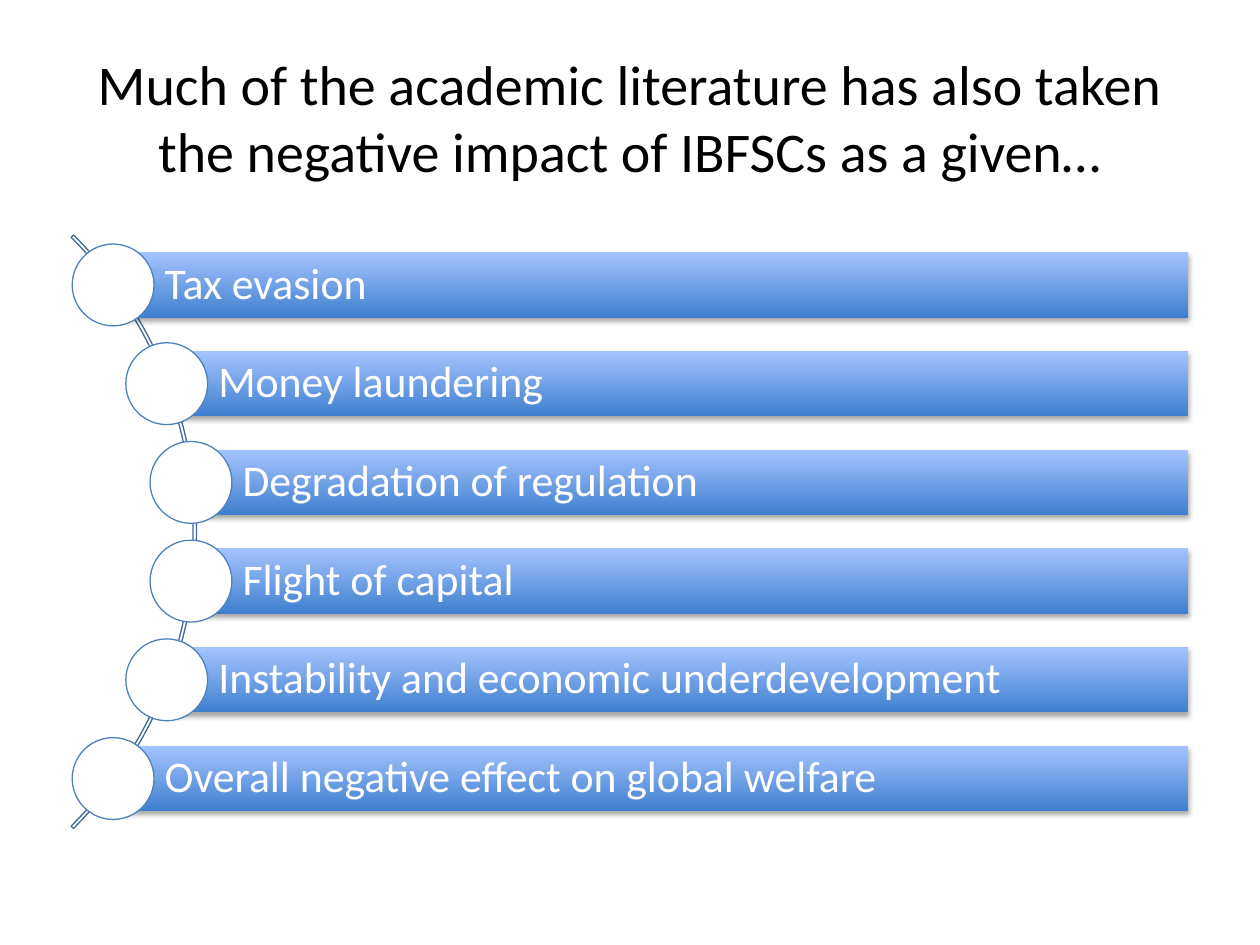
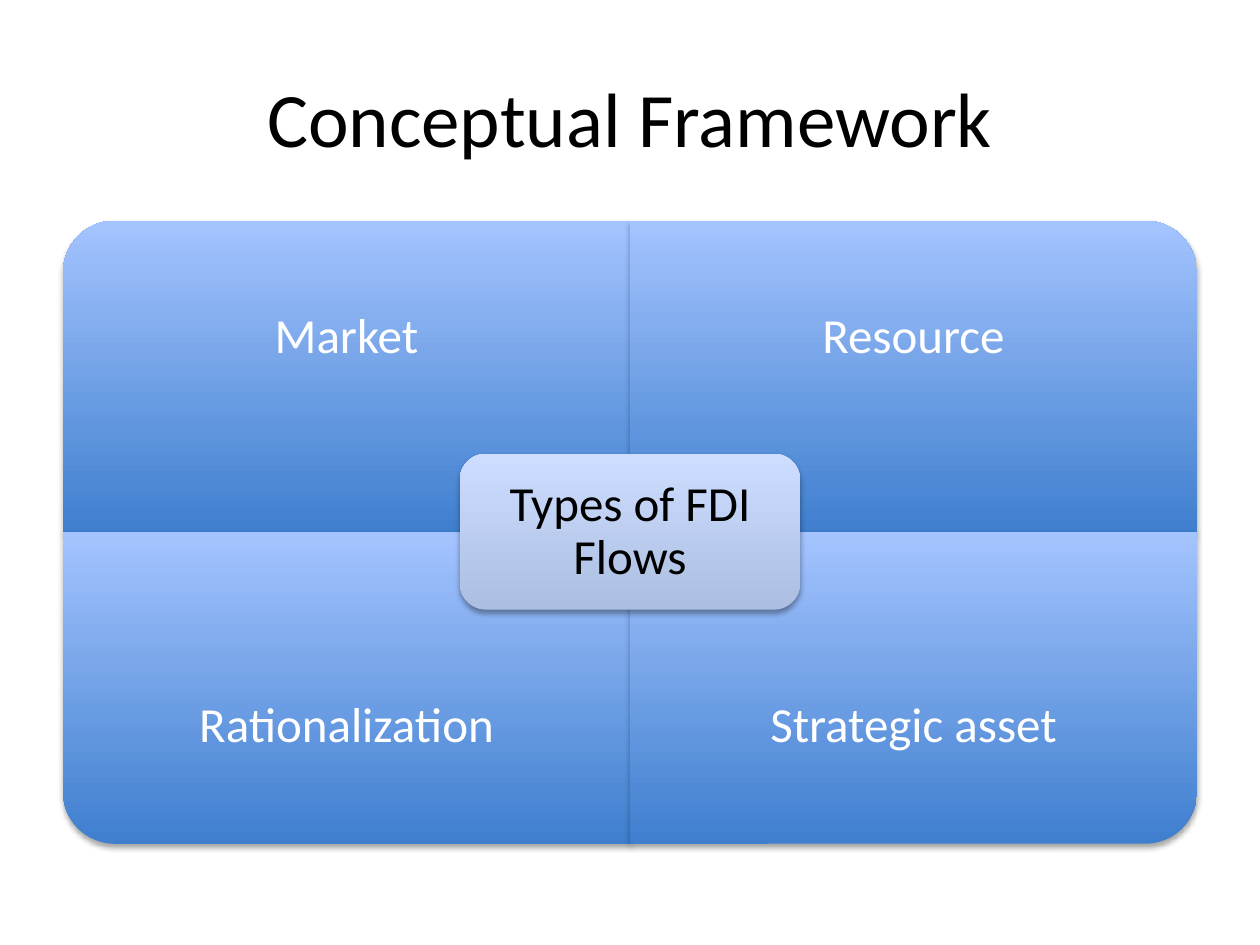
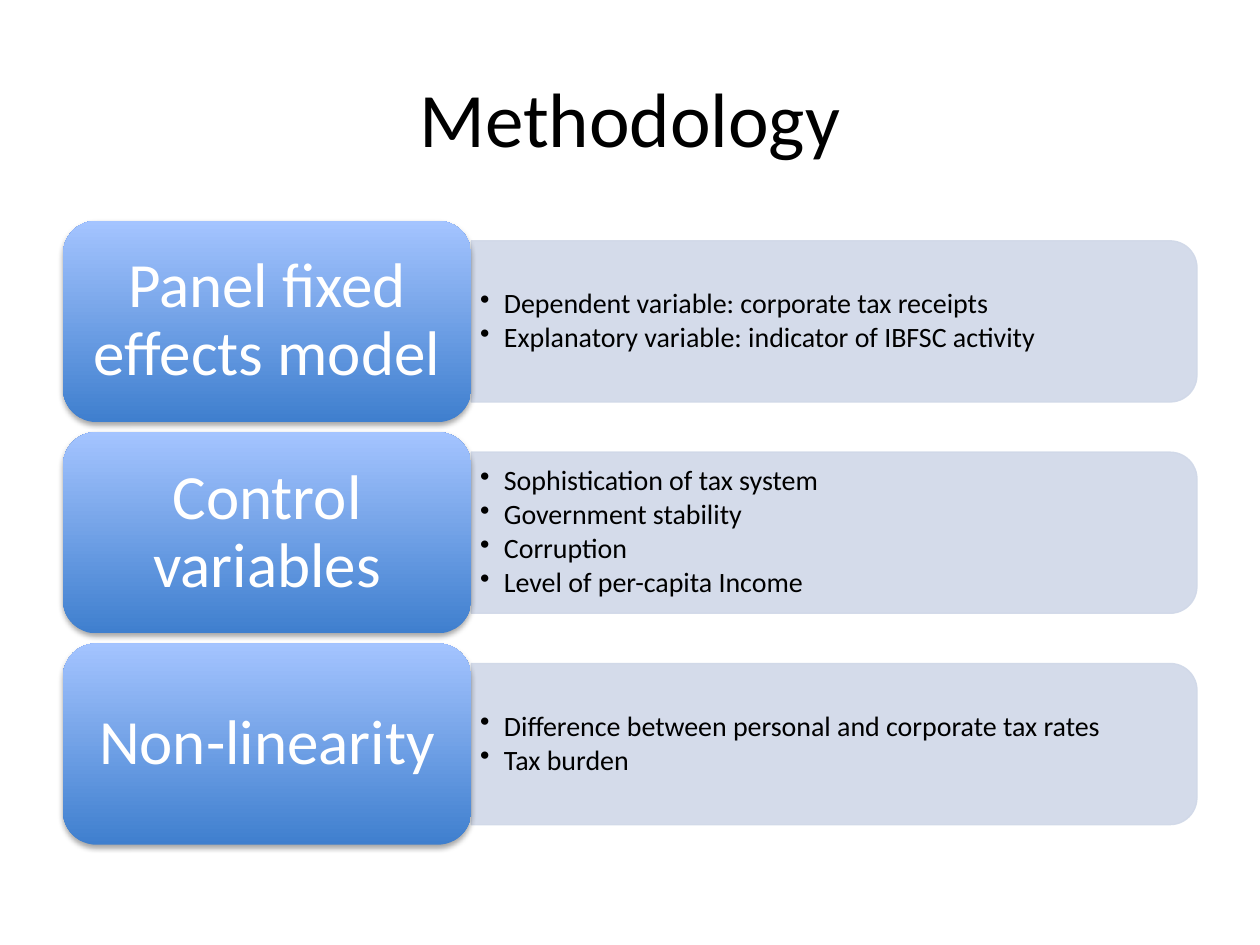
from math import sqrt

from lxml.etree import SubElement
from pptx import Presentation
from pptx.dml.color import RGBColor
from pptx.enum.shapes import MSO_SHAPE as Preset
from pptx.enum.text import MSO_ANCHOR as Anchor, MSO_AUTO_SIZE as AutoSize, PP_ALIGN as Align
from pptx.oxml.ns import qn
from pptx.util import Cm, Pt

FONT = "Calibri"
COLORS = {
    "black": "000000",
    "white": "FFFFFF",
    "deep": "3F7FCE",
    "sky": "A4C4FF",
    "mist": "ADBFE1",
    "pale": "CCDDFF",
    "panel": "D0D8E8",
    "ring": "4F81BD",
    "arc": "3F6797",
}
BLUE = ("deep", "sky")
LIGHT = ("mist", "pale")

LEFT, TOP, WIDTH = 1.27, 4.45, 22.86
MIDDLE_X, MIDDLE_Y = 12.7, 10.72

HARMS = [
    "Tax evasion",
    "Money laundering",
    "Degradation of regulation",
    "Flight of capital",
    "Instability and economic underdevelopment",
    "Overall negative effect on global welfare",
]
FLOWS = [
    ("Market", 0, 0, 270),
    ("Resource", 1, 0, 0),
    ("Rationalization", 0, 1, 180),
    ("Strategic asset", 1, 1, 90),
]
METHODS = [
    ("Panel fixed effects model", [
        "Dependent variable: corporate tax receipts",
        "Explanatory variable: indicator of IBFSC activity",
    ]),
    ("Control variables", [
        "Sophistication of tax system",
        "Government stability",
        "Corruption",
        "Level of per-capita Income",
    ]),
    ("Non-linearity", [
        "Difference between personal and corporate tax rates",
        "Tax burden",
    ]),
]


def rgb(name):
    return RGBColor.from_string(COLORS[name])


def style_font(para, size, color):
    para.font.name = FONT
    para.font.size = Pt(size)
    para.font.color.rgb = rgb(color)


def add_title_slide(deck, title, size=44):
    page = deck.slides.add_slide(deck.slide_layouts[5])
    box = page.shapes.title
    box.left, box.top, box.width, box.height = Cm(LEFT), Cm(0.76), Cm(WIDTH), Cm(3.18)
    box.text_frame.text = title
    box.text_frame.auto_size = AutoSize.NONE
    box.text_frame.vertical_anchor = Anchor.MIDDLE
    para = box.text_frame.paragraphs[0]
    para.alignment = Align.CENTER
    style_font(para, size, "black")
    return page


def add_bullet(para):
    properties = para._p.get_or_add_pPr()
    properties.set("marL", str(Cm(0.48)))
    properties.set("indent", str(-Cm(0.48)))
    SubElement(properties, qn("a:buChar")).set("char", "•")


def write(box, lines, size, color="white", margins=(0, 0, 0, 0), align=Align.CENTER, bullets=False):
    frame = box.text_frame
    frame.word_wrap = True
    frame.vertical_anchor = Anchor.MIDDLE
    (frame.margin_left, frame.margin_top,
     frame.margin_right, frame.margin_bottom) = map(Cm, margins)
    frame.text = "\n".join(lines)
    for para in frame.paragraphs:
        para.alignment = align
        para.line_spacing = 0.9
        if bullets:
            para.space_after = Pt(2.1)
            add_bullet(para)
        style_font(para, size, color)


def add_text(page, left, top, width, height, lines, size, **options):
    box = page.shapes.add_textbox(Cm(left), Cm(top), Cm(width), Cm(height))
    write(box, lines, size, **options)


def add_preset(page, preset, left, top, width, height, rotation=0):
    if rotation % 180:
        left, top = left + (width - height) / 2, top + (height - width) / 2
        width, height = height, width
    shape = page.shapes.add_shape(preset, Cm(left), Cm(top), Cm(width), Cm(height))
    shape.rotation = rotation
    shape.shadow.inherit = False
    return shape


def outline(shape, color):
    shape.line.color.rgb = rgb(color)
    shape.line.width = Pt(0.75)


def add_glossy(page, preset, *bounds, colors=BLUE, rotation=0):
    shape = add_preset(page, preset, *bounds, rotation=rotation)
    shape.fill.gradient()
    shape.fill.gradient_angle = 90
    for stop, color in zip(shape.fill.gradient_stops, colors):
        stop.color.rgb = rgb(color)
    shape.line.fill.background()
    properties = shape.element.spPr
    properties.find(qn("a:gradFill")).set("rotWithShape", "0")
    shadow = SubElement(properties.find(qn("a:effectLst")), qn("a:outerShdw"))
    for key, value in (("blurRad", Pt(3.1)), ("dist", Pt(1.8)), ("dir", 5400000), ("rotWithShape", 0)):
        shadow.set(key, str(int(value)))
    tint = SubElement(shadow, qn("a:srgbClr"), val=COLORS["black"])
    SubElement(tint, qn("a:alpha"), val="35000")
    return shape


def add_panel(page, *bounds):
    panel = add_preset(page, Preset.ROUND_2_SAME_RECTANGLE, *bounds, rotation=90)
    panel.fill.solid()
    panel.fill.fore_color.rgb = rgb("panel")
    outline(panel, "panel")
    for tint in panel.element.spPr.iter(qn("a:srgbClr")):
        SubElement(tint, qn("a:alpha"), val="90000")


def add_arc(page, center_x, center_y, diameter):
    arc = add_preset(page, Preset.BLOCK_ARC, center_x - diameter / 2, center_y - diameter / 2,
                     diameter, diameter)
    for index, value in enumerate((189, 27, 0.004)):
        arc.adjustments[index] = value
    arc.fill.background()
    outline(arc, "arc")


def add_circle(page, center_x, center_y, diameter):
    circle = add_preset(page, Preset.OVAL, center_x - diameter / 2, center_y - diameter / 2,
                        diameter, diameter)
    circle.fill.solid()
    circle.fill.fore_color.rgb = rgb("white")
    outline(circle, "ring")


def build_harms(deck):
    page = add_title_slide(
        deck, "Much of the academic literature has also taken the negative impact of IBFSCs as a given…", 32)
    arc_x, radius, pitch, bar_height, bar_right = -4.5, 8.41, 1.99, 1.32, 23.95
    add_arc(page, arc_x, MIDDLE_Y, 16.92)
    for index, harm in enumerate(HARMS):
        offset = (index - (len(HARMS) - 1) / 2) * pitch
        x, y = arc_x + sqrt(radius ** 2 - offset ** 2), MIDDLE_Y + offset
        bar = add_glossy(page, Preset.RECTANGLE, x, y - bar_height / 2, bar_right - x, bar_height)
        write(bar, [harm], 25, margins=(1.04, 0.18, 0.18, 0.18), align=Align.LEFT)
        add_circle(page, x, y, 1.65)


def build_framework(deck):
    page = add_title_slide(deck, "Conceptual Framework")
    width, height, text_height = WIDTH / 2, 6.28, 4.72
    for flow, column, row, rotation in FLOWS:
        left, top = LEFT + column * width, TOP + row * height
        add_glossy(page, Preset.ROUND_1_RECTANGLE, left, top, width, height, rotation=rotation)
        add_text(page, left, top + row * (height - text_height), width, text_height,
                 [flow], 28, margins=(0.55,) * 4)
    hub_width, hub_height = 6.86, 3.14
    hub = add_glossy(page, Preset.ROUNDED_RECTANGLE, MIDDLE_X - hub_width / 2,
                     MIDDLE_Y - hub_height / 2, hub_width, hub_height, colors=LIGHT)
    write(hub, ["Types of FDI Flows"], 28, color="black", margins=(0.3,) * 4)


def build_methodology(deck):
    page = add_title_slide(deck, "Methodology")
    pitch, height, label_width = 4.26, 4.06, 8.23
    panel_left, panel_height, text_height = LEFT + label_width, 3.25, 2.92
    for index, (label, points) in enumerate(METHODS):
        top = TOP + index * pitch
        middle = top + height / 2
        add_panel(page, panel_left, middle - panel_height / 2, WIDTH - label_width, panel_height)
        add_text(page, panel_left, middle - text_height / 2, 14.48, text_height, points, 16,
                 color="black", margins=(0.18, 0.08, 0.18, 0.08), align=Align.LEFT, bullets=True)
        card = add_glossy(page, Preset.ROUNDED_RECTANGLE, LEFT, top, label_width, height)
        write(card, [label], 36, margins=(0.38, 0.18, 0.38, 0.18))


def main():
    deck = Presentation()
    deck.slide_width, deck.slide_height = Cm(25.4), Cm(19.05)
    build_harms(deck)
    build_framework(deck)
    build_methodology(deck)
    deck.save("out.pptx")


if __name__ == "__main__":
    main()
